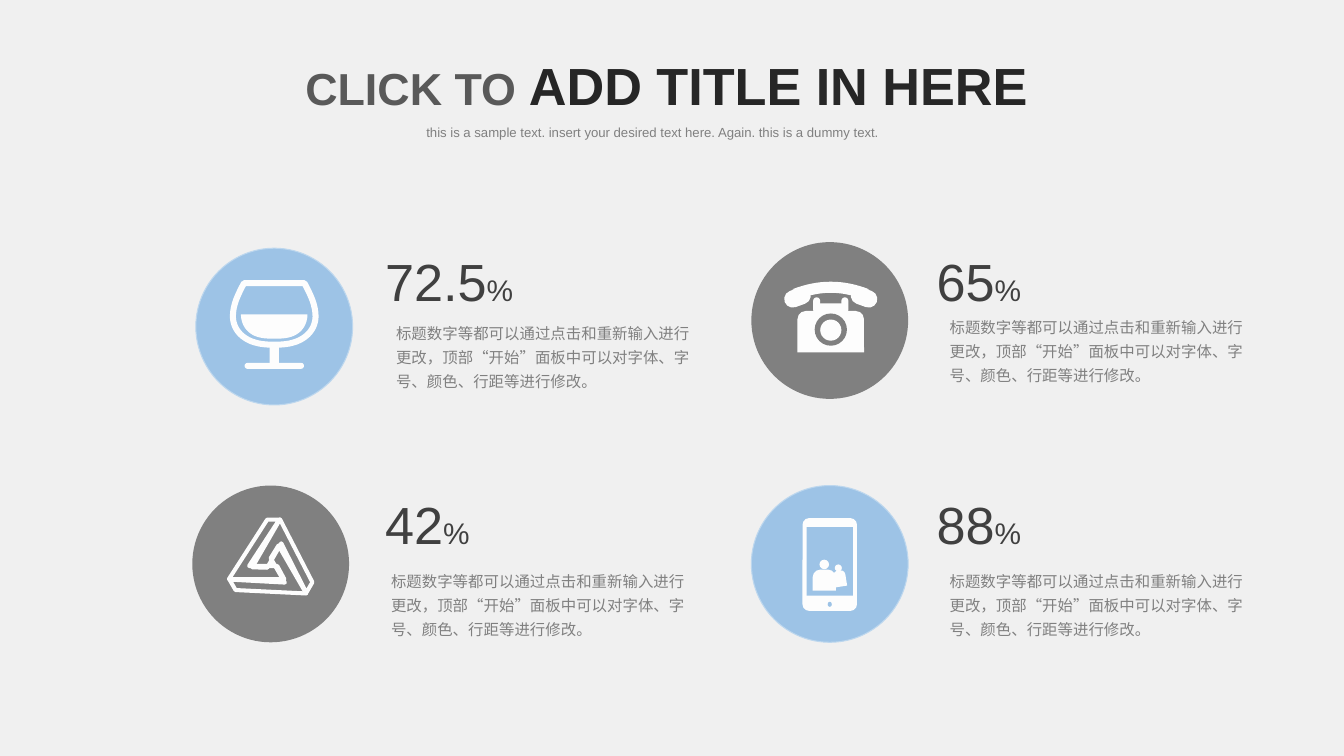
import math

import lxml.etree
import pptx
import pptx.dml.color
import pptx.enum.shapes
import pptx.enum.text
import pptx.util

UNIT = pptx.util.Inches(0.01)
BLUE, GRAY, WHITE, PALE = "9DC3E6", "808080", "FDFDFD", "BDD7EE"
DARK, LATIN, CHINESE = "404040", "Arial", "Noto Sans CJK SC"
BODY = "标题数字等都可以通过点击和重新输入进行更改，顶部“开始”面板中可以对字体、字号、颜色、行距等进行修改。"
KIND = pptx.enum.shapes.MSO_SHAPE
OVAL, BOX, PILL = KIND.OVAL, KIND.RECTANGLE, KIND.ROUNDED_RECTANGLE
DOME, TRAPEZOID = KIND.ROUND_2_SAME_RECTANGLE, KIND.TRAPEZOID


def paint(shape, fill, stroke=None, weight=0):
    for part, value in ((shape.fill, fill), (shape.line.fill, stroke)):
        if value:
            part.solid()
            part.fore_color.rgb = pptx.dml.color.RGBColor.from_string(value)
        else:
            part.background()
    if stroke:
        shape.line.width = pptx.util.Pt(weight)
    shape.shadow.inherit = False


def write(left, top, width, height, spans, font=LATIN, wrap=False, spacing=1.0):
    box = page.shapes.add_textbox(left * UNIT, top * UNIT, width * UNIT, height * UNIT)
    frame = box.text_frame
    frame.word_wrap = wrap
    frame.auto_size = pptx.enum.text.MSO_AUTO_SIZE.SHAPE_TO_FIT_TEXT
    para = frame.paragraphs[0]
    para.line_spacing = spacing
    for text, size, color, bold in spans:
        span = para.add_run()
        span.text = text
        span.font.size = pptx.util.Pt(size)
        span.font.bold = bold
        span.font.name = font
        span.font.color.rgb = pptx.dml.color.RGBColor.from_string(color)
        east = lxml.etree.SubElement(span.font._element, pptx.oxml.ns.qn("a:ea"))
        east.set("typeface", font)


deck = pptx.Presentation()
deck.slide_width = 1333 * UNIT
deck.slide_height = 750 * UNIT
page = deck.slides.add_slide(deck.slide_layouts[6])
page.background.fill.solid()
page.background.fill.fore_color.rgb = pptx.dml.color.RGBColor.from_string("F0F0F0")

write(293, 48, 744, 73, [("CLICK TO ", 32, "595959", True),
                         ("ADD TITLE IN HERE", 37.3, "262626", True)])
write(413, 118, 479, 26, [
    ("this is a sample text. insert your desired text here. Again. this is a dummy text.",
     9.4, GRAY, False)])

# Parts: kind, centre offset from the disc, size, fill, corner or slant, turn.
glass_parts = [
    (BOX, 0, 28, 9, 20, WHITE, None, 0),
    (PILL, 0, 39, 59, 6, WHITE, 0.5, 0),
]
telephone_parts = [
    (DOME, 1, 11, 66, 41, WHITE, 0.2, 0),
    (BOX, 1, -13, 28, 8, WHITE, None, 0),
    (OVAL, 1, 9, 32, 32, GRAY, None, 0),
    (OVAL, 1, 9.5, 21, 21, WHITE, None, 0),
]
for side in (-1, 1):
    telephone_parts += [
        (PILL, 1 + 14 * side, -15, 7, 16, WHITE, 0.5, 0),
        (PILL, 1 + 33 * side, -23, 27, 17, WHITE, 0.5, 20 * side),
    ]
mobile_parts = [
    (PILL, 0, 0.5, 54, 92, WHITE, 0.12, 0),
    (BOX, 0, -2.5, 46, 68, BLUE, None, 0),
    (OVAL, 0, 40, 4, 5, BLUE, None, 0),
]
for x, head_y, head, body_x, body_y, width, height, turn in (
        (-5.5, 0.5, 9.5, -5.5, 16, 23, 21, 0),
        (8.5, 4, 7, 10, 14.5, 12, 16, -9)):
    mobile_parts += [
        (OVAL, x, head_y, head, head, WHITE, None, 0),
        (DOME, body_x, body_y, width, height, WHITE, 0.38, turn),
    ]

# Glass: the bowl narrows to its rim above the widest line and is rounded below it.
WIDEST, RIM, BOWL_TOP, BOWL_MIDDLE, BOWL_DEPTH = 41, 30, -43, -10, 28
bowl, wine = [], []
for step in range(9):
    share = step / 8
    bowl.append((RIM + (WIDEST - RIM) * math.sin(share * math.pi / 2),
                 BOWL_TOP + (BOWL_MIDDLE - BOWL_TOP) * share))
for step in range(1, 17):
    angle = step / 16 * math.pi / 2
    bowl.append((WIDEST * math.cos(angle) ** 0.8,
                 BOWL_MIDDLE + BOWL_DEPTH * math.sin(angle)))
for step in range(17):
    angle = step / 16 * math.pi / 2
    wine.append((33 * math.cos(angle) ** 0.7, -12 + 24 * math.sin(angle)))
bowl += [(-x, y) for x, y in reversed(bowl)]
wine += [(-x, y) for x, y in reversed(wine)]

# Handset: a strip between two parabolas, wider on top.
handset = []
for half, peak, drop, direction in ((38, -38.5, 7.5, 1), (20, -27.5, 2.5, -1)):
    for step in range(-8, 9):
        share = direction * step / 8
        handset.append((1 + half * share, peak + drop * share ** 2))

# Impossible triangle: one bent band, turned by thirds of a circle.
band = [(-42.5, 15), (-4.5, -44), (7.5, -44), (-22.5, 2), (5.5, 2), (12.5, 15)]
bands = []
for third in range(3):
    cosine = math.cos(third * math.tau / 3)
    sine = math.sin(third * math.tau / 3)
    bands.append(([(1 + x * cosine - y * sine, x * sine + y * cosine) for x, y in band],
                  None, 2.9))

# Outlines: points, fill, stroke weight.
cards = [
    (272, 324, BLUE, "72.5", 149, 383, 311, glass_parts,
     [(bowl, None, 4.3), (wine, WHITE, 0)]),
    (823, 318, GRAY, "65", 105, 932, 305, telephone_parts, [(handset, WHITE, 0)]),
    (268.5, 559.5, GRAY, "42", 105, 378, 557, [], bands),
    (823, 559.5, BLUE, "88", 105, 932, 557, mobile_parts, []),
]
for index, card in enumerate(cards):
    center_x, center_y, color, number, width, body_left, body_top, parts, outlines = card
    disc = (OVAL, 0, 0, 155.5, 155.5, color, None, 0)
    for part in [disc] + parts:
        kind, x, y, part_width, part_height, fill, adjustment, turn = part
        shape = page.shapes.add_shape(
            kind,
            round((center_x + x - part_width / 2) * UNIT),
            round((center_y + y - part_height / 2) * UNIT),
            round(part_width * UNIT), round(part_height * UNIT))
        shape.rotation = turn
        if adjustment is not None:
            shape.adjustments[0] = adjustment
        edged = part is disc and color == BLUE
        paint(shape, fill, PALE if edged else None, 0.75)
    for points, fill, weight in outlines:
        corners = [((center_x + x) * UNIT, (center_y + y) * UNIT) for x, y in points]
        builder = page.shapes.build_freeform(*corners[0])
        builder.add_line_segments(corners[1:], close=True)
        paint(builder.convert_to_shape(), fill, WHITE if weight else None, weight)

    row, column = divmod(index, 2)
    write(372 + 547 * column, 242 + 241 * row, width, 73,
          [(number, 37.3, DARK, False), ("%", 21.3, DARK, False)])
    write(body_left, body_top, 318, 82, [(BODY, 11, GRAY, False)],
          font=CHINESE, wrap=True, spacing=1.3)

deck.save("out.pptx")
